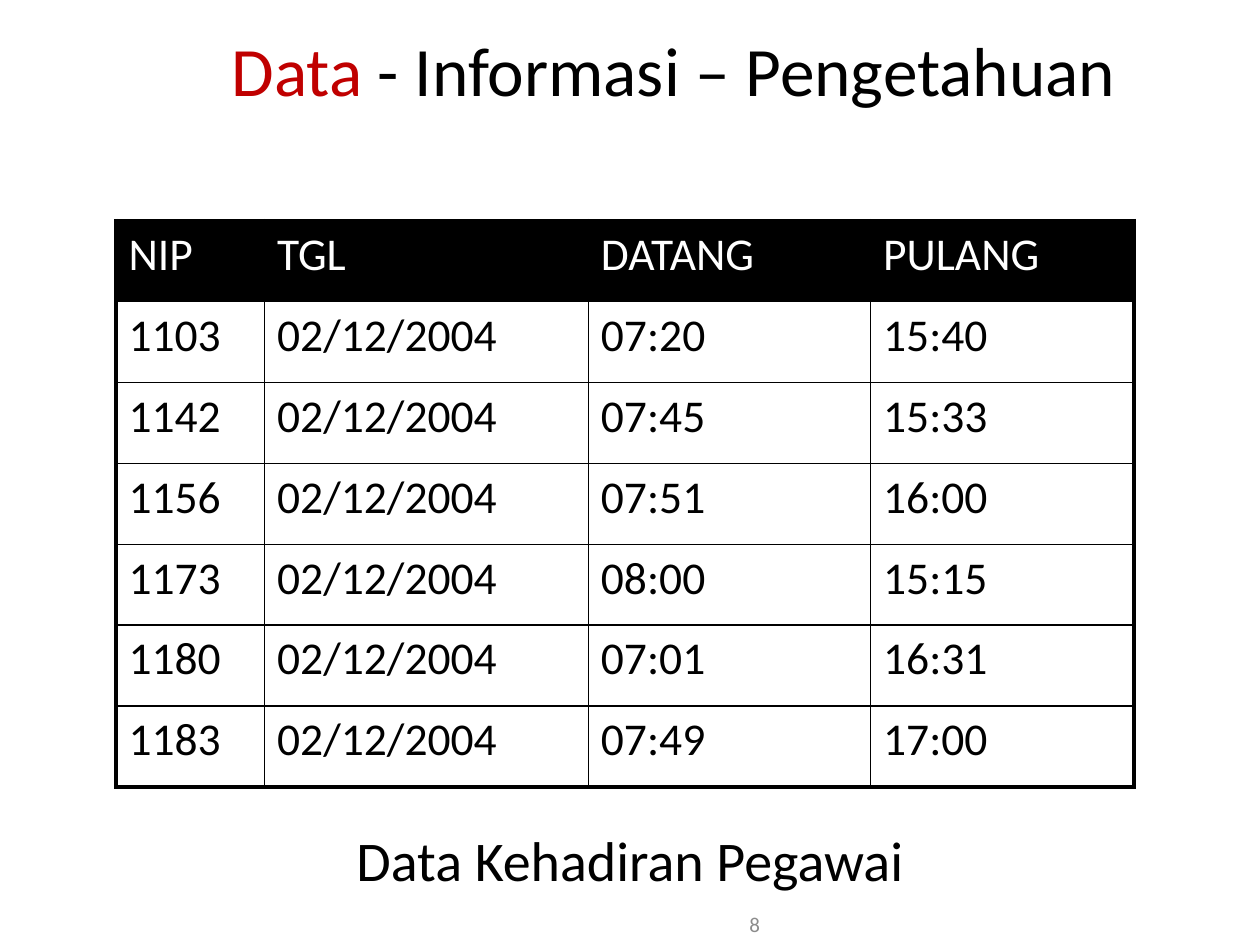
from lxml import etree
from pptx import Presentation
from pptx.dml.color import RGBColor
from pptx.enum.text import MSO_ANCHOR, PP_ALIGN
from pptx.oxml.ns import qn
from pptx.util import Inches, Pt

CENTER, RIGHT = PP_ALIGN.CENTER, PP_ALIGN.RIGHT
TOP, MIDDLE = MSO_ANCHOR.TOP, MSO_ANCHOR.MIDDLE
BLACK = RGBColor(0x00, 0x00, 0x00)
WHITE = RGBColor(0xFF, 0xFF, 0xFF)
RED = RGBColor(0xC0, 0x00, 0x00)
GRAY = RGBColor(0x8C, 0x8C, 0x8C)

HEADER = ("NIP", "TGL", "DATANG", "PULANG")
DATE = "02/12/2004"
ATTENDANCE = (
    ("1103", "07:20", "15:40"),
    ("1142", "07:45", "15:33"),
    ("1156", "07:51", "16:00"),
    ("1173", "08:00", "15:15"),
    ("1180", "07:01", "16:31"),
    ("1183", "07:49", "17:00"),
)


class SlideBuilder:
    """Holds the style and the current slide; boxes are percentages of the slide."""

    font = "Calibri"
    cell_size = 26
    inner_line, outer_line = Pt(1), Pt(2.25)

    def __init__(self, deck):
        self.width, self.height = deck.slide_width, deck.slide_height
        self.slide = deck.slides.add_slide(deck.slide_layouts[6])

    def place(self, left, top, width, height):
        return (int(self.width * left / 100), int(self.height * top / 100),
                int(self.width * width / 100), int(self.height * height / 100))

    def add_runs(self, paragraph, runs, size):
        for words, color in runs:
            run = paragraph.add_run()
            run.text = words
            for name, value in {"name": self.font, "size": Pt(size)}.items():
                setattr(run.font, name, value)
            run.font.color.rgb = color

    def text(self, box, runs, size, align=CENTER, anchor=MIDDLE):
        frame = self.slide.shapes.add_textbox(*self.place(*box)).text_frame
        for name, value in {"word_wrap": True, "vertical_anchor": anchor}.items():
            setattr(frame, name, value)
        paragraph = frame.paragraphs[0]
        paragraph.alignment = align
        self.add_runs(paragraph, runs, size)

    def borders(self, cell, outer_sides):
        properties = cell._tc.get_or_add_tcPr()
        for index, side in enumerate("LRTB"):
            weight = self.outer_line if side in outer_sides else self.inner_line
            line = etree.Element(qn(f"a:ln{side}"), w=str(int(weight)))
            fill = etree.SubElement(line, qn("a:solidFill"))
            etree.SubElement(fill, qn("a:srgbClr"), val=str(BLACK))
            properties.insert(index, line)

    def table(self, box, rows, column_shares):
        last_row, last_column = len(rows) - 1, len(column_shares) - 1
        left, top, width, height = self.place(*box)
        table = self.slide.shapes.add_table(
            len(rows), len(column_shares), left, top, width, height).table
        table.horz_banding = False
        for column, share in zip(table.columns, column_shares):
            column.width = int(width * share / sum(column_shares))
        for r, values in enumerate(rows):
            table.rows[r].height = height // len(rows)
            for c, value in enumerate(values):
                cell = table.cell(r, c)
                if r == 0:
                    cell.fill.solid()
                    cell.fill.fore_color.rgb = BLACK
                else:
                    cell.fill.background()
                color = WHITE if r == 0 else BLACK
                self.add_runs(cell.text_frame.paragraphs[0], [(value, color)], self.cell_size)
                edges = {"L": c == 0, "R": c == last_column, "T": r == 0, "B": r == last_row}
                self.borders(cell, [side for side, outer in edges.items() if outer])


def main():
    deck = Presentation()
    deck.slide_width, deck.slide_height = Inches(10), Inches(7.5)
    page = SlideBuilder(deck)

    # Title with the current topic highlighted
    page.text((6.9, 2.27, 93.1, 10), [("Data", RED), (" - Informasi – Pengetahuan", BLACK)], 39.6)

    # Caption and slide number
    page.text((6.9, 86.67, 86.2, 8.27), [("Data Kehadiran Pegawai", BLACK)], 32, anchor=TOP)
    page.text((38.8, 95.6, 22.5, 4.4), [("8", GRAY)], 12, align=RIGHT)

    # Attendance table, all rows on the same date
    rows = [HEADER] + [(nip, DATE, arrive, leave) for nip, arrive, leave in ATTENDANCE]
    page.table((9.2, 23.33, 80.8, 60), rows, (1.18, 2.57, 2.24, 2.09))

    deck.save("out.pptx")


if __name__ == "__main__":
    main()
